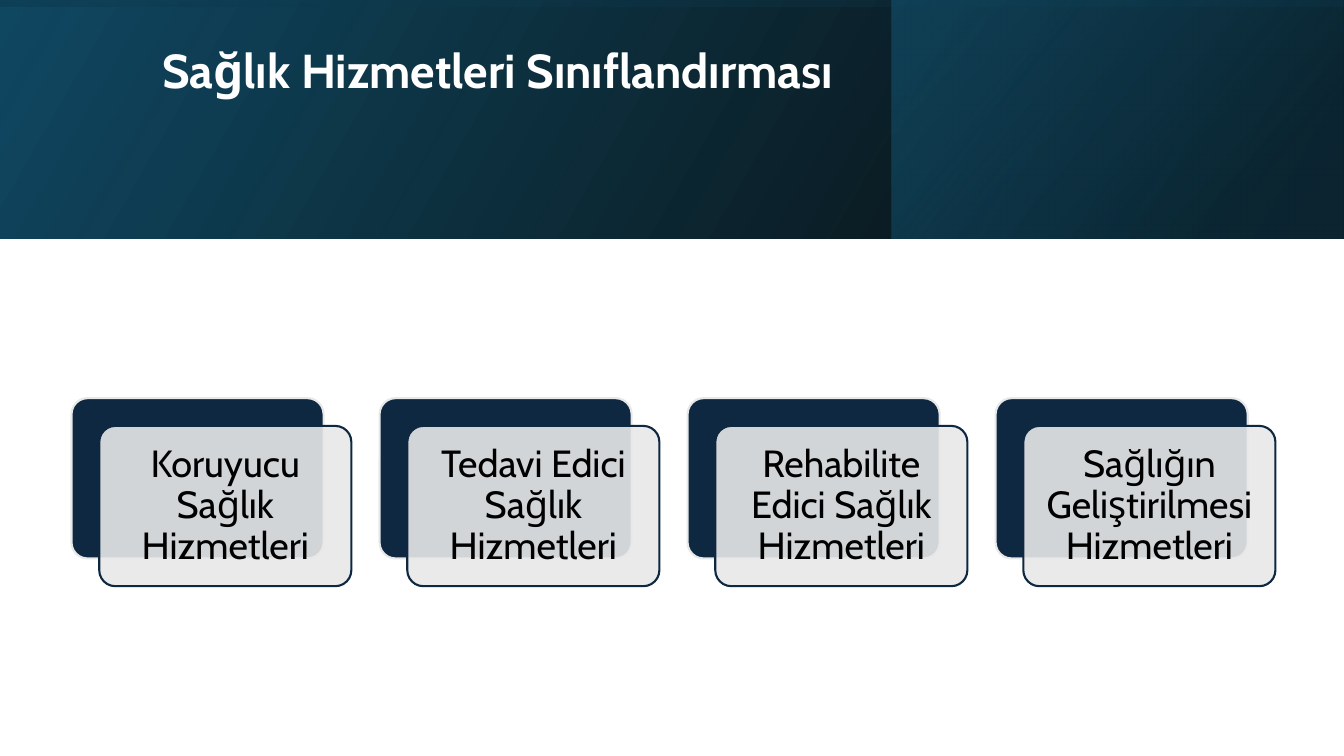
from lxml import etree
from pptx import Presentation
from pptx import util as u
from pptx.dml.color import RGBColor
from pptx.enum import shapes, text
from pptx.oxml import ns

WIDTH, HEIGHT = 13.33, 7.5
BANNER_HEIGHT = 2.37
CARD_WIDTH, CARD_HEIGHT = 2.5, 1.59
CARD_LEFT, CARD_TOP, CARD_PITCH = 0.71, 3.95, 3.055
FRONT_SHIFT = 0.275
NAVY, GREY, WHITE, BLACK = "0E2841", "E8E8E8", "FFFFFF", "000000"
SERVICES = [
    "Koruyucu Sağlık Hizmetleri",
    "Tedavi Edici Sağlık Hizmetleri",
    "Rehabilite Edici Sağlık Hizmetleri",
    "Sağlığın Geliştirilmesi Hizmetleri",
]


def color(value):
    return RGBColor.from_string(value)


def inches(*lengths):
    return [u.Inches(length) for length in lengths]


def set_alpha(color_element, percent):
    alpha = etree.SubElement(color_element, ns.qn("a:alpha"))
    alpha.set("val", str(percent * 1000))


def add_band(slide, box, angle, stops, rotation=0):
    band = slide.shapes.add_shape(shapes.MSO_SHAPE.RECTANGLE, *inches(*box))
    band.shadow.inherit = False
    band.line.fill.background()
    band.rotation = rotation
    properties = band.element.spPr
    properties.find(ns.qn("a:xfrm")).set("flipH", "1")
    gradient = etree.Element(ns.qn("a:gradFill"), rotWithShape="1")
    stop_list = etree.SubElement(gradient, ns.qn("a:gsLst"))
    for position, value, opacity in stops:
        stop = etree.SubElement(stop_list, ns.qn("a:gs"), pos=str(position * 1000))
        set_alpha(etree.SubElement(stop, ns.qn("a:srgbClr"), val=value), opacity)
    etree.SubElement(gradient, ns.qn("a:lin"), ang=str(angle * 60000), scaled="0")
    properties.find(ns.qn("a:prstGeom")).addnext(gradient)


def write(frame, wording, size, value, alignment, bold=False):
    frame.word_wrap = True
    frame.text = wording
    paragraph = frame.paragraphs[0]
    paragraph.alignment = alignment
    paragraph.line_spacing = 0.9
    font = paragraph.runs[0].font
    font.name, font.size, font.bold = "Cabin", u.Pt(size), bold
    font.color.rgb = color(value)


def add_title(slide, wording):
    title = slide.shapes.add_textbox(*inches(1.51, 0.38, 10.63, 1.72))
    frame = title.text_frame
    frame.vertical_anchor = text.MSO_ANCHOR.TOP
    frame.margin_top = u.Inches(0.09)
    write(frame, wording, 34, WHITE, text.PP_ALIGN.LEFT, bold=True)


def add_panel(slide, left, top, fill, outline):
    panel = slide.shapes.add_shape(
        shapes.MSO_SHAPE.ROUNDED_RECTANGLE,
        *inches(left, top, CARD_WIDTH, CARD_HEIGHT))
    panel.adjustments[0] = 0.1
    panel.shadow.inherit = False
    panel.fill.solid()
    panel.fill.fore_color.rgb = color(fill)
    panel.line.color.rgb = color(outline)
    panel.line.width = u.Pt(1.5)
    return panel


def add_service(slide, column, wording):
    left = CARD_LEFT + column * CARD_PITCH
    add_panel(slide, left, CARD_TOP, NAVY, GREY)
    front = add_panel(slide, left + FRONT_SHIFT, CARD_TOP + FRONT_SHIFT, GREY, NAVY)
    set_alpha(front.element.spPr.find(ns.qn("a:solidFill"))[0], 90)
    frame = front.text_frame
    frame.vertical_anchor = text.MSO_ANCHOR.MIDDLE
    frame.margin_left = frame.margin_right = u.Inches(0.11)
    frame.margin_top = frame.margin_bottom = u.Inches(0.11)
    write(frame, wording, 27, BLACK, text.PP_ALIGN.CENTER)


def main():
    deck = Presentation()
    deck.slide_width, deck.slide_height = inches(WIDTH, HEIGHT)
    slide = deck.slides.add_slide(deck.slide_layouts[6])

    add_band(slide, (0, 0, WIDTH, BANNER_HEIGHT), 330,
             [(0, BLACK, 96), (100, "104862", 100)])
    add_band(slide, (8.84, 0, 4.48, BANNER_HEIGHT), 320,
             [(19, "0B3041", 68), (100, "156082", 48)])
    offset = (WIDTH - BANNER_HEIGHT) / 2
    add_band(slide, (offset, -offset, BANNER_HEIGHT, WIDTH), 350,
             [(23, "104862", 16), (99, BLACK, 45)], rotation=270)

    add_title(slide, "Sağlık Hizmetleri Sınıflandırması")
    for column, service in enumerate(SERVICES):
        add_service(slide, column, service)
    deck.save("out.pptx")


if __name__ == "__main__":
    main()
